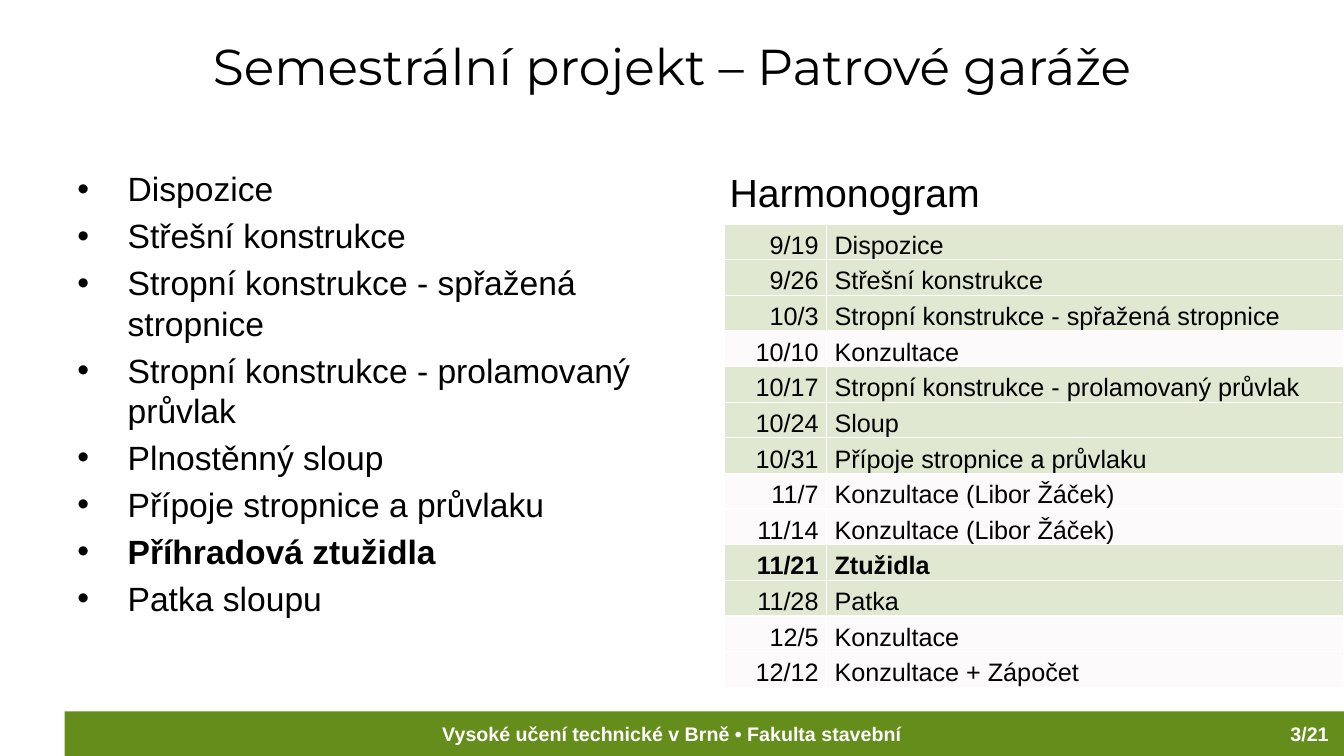
from lxml import etree
from pptx import Presentation
from pptx.dml.color import RGBColor
from pptx.enum.shapes import MSO_SHAPE
from pptx.enum.text import MSO_ANCHOR, MSO_AUTO_SIZE, PP_ALIGN
from pptx.oxml.ns import qn
from pptx.util import Pt

RECTANGLE = MSO_SHAPE.RECTANGLE
TOP, BOTTOM = MSO_ANCHOR.TOP, MSO_ANCHOR.BOTTOM
LEFT, CENTER, RIGHT = PP_ALIGN.LEFT, PP_ALIGN.CENTER, PP_ALIGN.RIGHT
NO_AUTOFIT = MSO_AUTO_SIZE.NONE

COLORS = {"green": "658D1B", "pink": "F4E7E7", "white": "FFFFFF", "black": "000000"}

TOPICS = [
    "Dispozice",
    "Střešní konstrukce",
    "Stropní konstrukce - spřažená stropnice",
    "Stropní konstrukce - prolamovaný průvlak",
    "Plnostěnný sloup",
    "Přípoje stropnice a průvlaku",
    "Příhradová ztužidla",
    "Patka sloupu",
]
CURRENT_TOPIC = "Příhradová ztužidla"

SCHEDULE = [
    ("9/19", "Dispozice"),
    ("9/26", "Střešní konstrukce"),
    ("10/3", "Stropní konstrukce - spřažená stropnice"),
    ("10/10", "Konzultace"),
    ("10/17", "Stropní konstrukce - prolamovaný průvlak"),
    ("10/24", "Sloup"),
    ("10/31", "Přípoje stropnice a průvlaku"),
    ("11/7", "Konzultace (Libor Žáček)"),
    ("11/14", "Konzultace (Libor Žáček)"),
    ("11/21", "Ztužidla"),
    ("11/28", "Patka"),
    ("12/5", "Konzultace"),
    ("12/12", "Konzultace + Zápočet"),
]
CURRENT_DATE = "11/21"
COLUMN_WIDTHS = (72.72, 369.36)
ROW_HEIGHT = 25.48


def color(name):
    return RGBColor.from_string(COLORS[name])


def add_run(paragraph, text, size, font="Arial", color_name="black", bold=False):
    run = paragraph.add_run()
    run.text = text
    run.font.name = font
    run.font.size = Pt(size)
    run.font.bold = bold
    run.font.color.rgb = color(color_name)


def place(shape, left, top, width, height):
    shape.left, shape.top = Pt(left), Pt(top)
    shape.width, shape.height = Pt(width), Pt(height)


def add_footer_band(slide):
    band = slide.shapes.add_shape(RECTANGLE, Pt(46.2), Pt(508.2), Pt(913.8), Pt(31.8))
    band.shadow.inherit = False
    band.fill.solid()
    band.fill.fore_color.rgb = color("green")
    band.line.fill.background()


def add_text(slide, box, text, size, alignment=LEFT, **style):
    shape = slide.shapes.add_textbox(*(Pt(length) for length in box))
    shape.text_frame.word_wrap = True
    paragraph = shape.text_frame.paragraphs[0]
    paragraph.alignment = alignment
    add_run(paragraph, text, size, **style)


def fill_title(title, text):
    place(title, 48, 21.6, 864, 78.5)
    frame = title.text_frame
    frame.auto_size = NO_AUTOFIT
    frame.vertical_anchor = TOP
    paragraph = frame.paragraphs[0]
    paragraph.alignment = CENTER
    add_run(paragraph, text, 36, font="Montserrat")


def add_bullet(paragraph):
    properties = paragraph._p.get_or_add_pPr()
    properties.set("marL", str(Pt(36)))
    properties.set("indent", str(-Pt(36)))
    etree.SubElement(properties, qn("a:buFont"), typeface="Arial")
    etree.SubElement(properties, qn("a:buChar"), char="•")


def fill_topics(body):
    place(body, 48, 116.6, 426.2, 365.8)
    frame = body.text_frame
    frame.auto_size = NO_AUTOFIT
    for index, topic in enumerate(TOPICS):
        paragraph = frame.add_paragraph() if index else frame.paragraphs[0]
        add_bullet(paragraph)
        paragraph.line_spacing = Pt(28.8)
        paragraph.space_before = Pt(4.8 if index else 0)
        add_run(paragraph, topic, 24, bold=topic == CURRENT_TOPIC)


def add_borders(cell):
    properties = cell._tc.get_or_add_tcPr()
    for side in ("lnL", "lnR", "lnT", "lnB"):
        line = etree.SubElement(properties, qn(f"a:{side}"), w=str(Pt(1)))
        fill = etree.SubElement(line, qn("a:solidFill"))
        etree.SubElement(fill, qn("a:srgbClr"), val=COLORS["white"])


def format_cell(cell, text, alignment, fill_name, bold):
    cell.margin_left = cell.margin_right = Pt(5.75)
    cell.margin_top, cell.margin_bottom = Pt(0.75), Pt(0)
    cell.vertical_anchor = BOTTOM
    add_borders(cell)
    cell.fill.solid()
    cell.fill.fore_color.rgb = color(fill_name)
    fill_color = cell._tc.tcPr.find(qn("a:solidFill")).find(qn("a:srgbClr"))
    etree.SubElement(fill_color, qn("a:alpha"), val="20000")
    paragraph = cell.text_frame.paragraphs[0]
    paragraph.alignment = alignment
    add_run(paragraph, text, 18, bold=bold)


def add_schedule(slide):
    frame = slide.shapes.add_table(
        len(SCHEDULE), 2, Pt(517.7), Pt(160),
        Pt(sum(COLUMN_WIDTHS)), Pt(ROW_HEIGHT * len(SCHEDULE)),
    )
    table = frame.table
    table.first_row = table.horz_banding = False
    for column, width in zip(table.columns, COLUMN_WIDTHS):
        column.width = Pt(width)
    for index, (date, topic) in enumerate(SCHEDULE):
        table.rows[index].height = Pt(ROW_HEIGHT)
        fill_name = "pink" if topic.startswith("Konzultace") else "green"
        bold = date == CURRENT_DATE
        format_cell(table.cell(index, 0), date, RIGHT, fill_name, bold)
        format_cell(table.cell(index, 1), topic, LEFT, fill_name, bold)


def main():
    presentation = Presentation()
    presentation.slide_width, presentation.slide_height = Pt(960), Pt(540)
    slide = presentation.slides.add_slide(presentation.slide_layouts[1])
    footer_style = {"color_name": "white", "bold": True}

    add_footer_band(slide)
    add_text(slide, (0, 512, 960, 24.5), "Vysoké učení technické v Brně • Fakulta stavební",
             14, CENTER, **footer_style)
    add_text(slide, (861.8, 512, 94.4, 24.5), "3/21", 14, RIGHT, **footer_style)
    fill_title(slide.shapes.title, "Semestrální projekt – Patrové garáže")
    fill_topics(slide.placeholders[1])
    add_text(slide, (514, 116.6, 426.2, 365.8), "Harmonogram", 28)
    add_schedule(slide)

    presentation.save("out.pptx")


if __name__ == "__main__":
    main()
